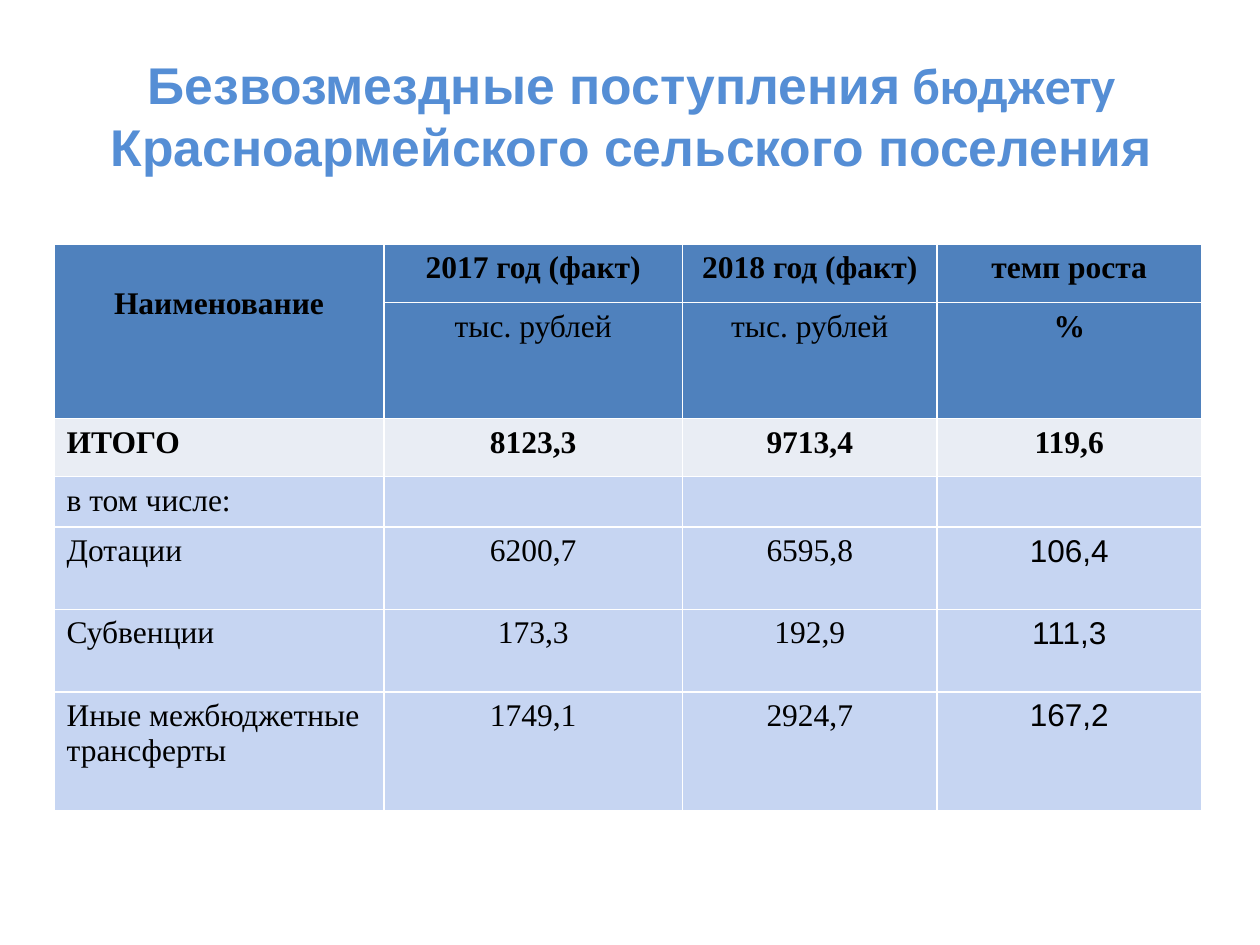
from dataclasses import dataclass

import pptx
import pptx.dml.color
import pptx.enum.text
import pptx.oxml
import pptx.oxml.ns
import pptx.util
from pptx.dml.color import RGBColor
from pptx.util import Cm

TITLE_BLUE = RGBColor(0x55, 0x8E, 0xD5)
HEADER_BLUE = RGBColor(0x4F, 0x81, 0xBD)
TOTAL_GREY = RGBColor(0xE9, 0xED, 0xF4)
BODY_BLUE = RGBColor(0xC6, 0xD5, 0xF2)
BLACK = RGBColor(0, 0, 0)
WHITE = RGBColor(0xFF, 0xFF, 0xFF)

SERIF, SANS = "Times New Roman", "Arial"
LEFT = pptx.enum.text.PP_ALIGN.LEFT
CENTER = pptx.enum.text.PP_ALIGN.CENTER
COL_WIDTHS = (6.65, 6.02, 5.13, 5.33)


@dataclass(frozen=True)
class Row:
    height: float
    fill: RGBColor
    texts: tuple[str, ...]
    bold: tuple[bool, ...] = (False,) * 4
    label_align: int = LEFT
    rate_font: str = SERIF


ROWS = (
    Row(1.17, HEADER_BLUE,
        ("Наименование", "2017 год (факт)", "2018 год (факт)", "темп роста"),
        bold=(True,) * 4, label_align=CENTER),
    Row(2.34, HEADER_BLUE, ("", "тыс. рублей", "тыс. рублей", "%"),
        bold=(False, False, False, True)),
    Row(1.17, TOTAL_GREY, ("ИТОГО", "8123,3", "9713,4", "119,6"),
        bold=(True,) * 4),
    Row(0.97, BODY_BLUE, ("в том числе:", "", "", "")),
    Row(1.66, BODY_BLUE, ("Дотации", "6200,7", "6595,8", "106,4"),
        rate_font=SANS),
    Row(1.66, BODY_BLUE, ("Субвенции", "173,3", "192,9", "111,3"),
        rate_font=SANS),
    Row(2.39, BODY_BLUE,
        ("Иные межбюджетные трансферты", "1749,1", "2924,7", "167,2"),
        rate_font=SANS),
)


def add_text(p, text: str, *, font: str = SERIF, size: float = 18,
             color: RGBColor = BLACK, bold: bool = False,
             align: int = CENTER) -> None:
    p.alignment = align
    r = p.add_run()
    r.text = text
    r.font.name = font
    r.font.size = pptx.util.Pt(size)
    r.font.bold = bold
    r.font.color.rgb = color


def set_borders(cell, color: RGBColor = WHITE, width: float = 1) -> None:
    tc_pr = cell._tc.get_or_add_tcPr()
    for i, side in enumerate(("lnL", "lnR", "lnT", "lnB")):
        tc_pr.insert(i, pptx.oxml.parse_xml(
            f'<a:{side} {pptx.oxml.ns.nsdecls("a")} w="{pptx.util.Pt(width)}">'
            f'<a:solidFill><a:srgbClr val="{color}"/></a:solidFill></a:{side}>'))


def add_title(s) -> None:
    sp = s.shapes.add_textbox(Cm(1.3), Cm(0.91), Cm(22.86), Cm(2.8))
    tf = sp.text_frame
    tf.word_wrap = True
    tf.vertical_anchor = pptx.enum.text.MSO_ANCHOR.MIDDLE
    for text, font in (("Безвозмездные поступления", SANS),
                       (" бюджету ", "Calibri"),
                       ("Красноармейского сельского поселения", SANS)):
        add_text(tf.paragraphs[0], text, font=font, size=29.5,
                 color=TITLE_BLUE, bold=True)


def add_income_table(s) -> None:
    table = s.shapes.add_table(
        len(ROWS), len(COL_WIDTHS), Cm(1.09), Cm(4.93),
        Cm(sum(COL_WIDTHS)), Cm(sum(row.height for row in ROWS))).table
    table.first_row = table.horz_banding = False
    for column, width in zip(table.columns, COL_WIDTHS):
        column.width = Cm(width)
    # The name heading spans both header rows
    name = table.cell(0, 0)
    name.merge(table.cell(1, 0))
    name.margin_top = Cm(0.84)

    for i, row in enumerate(ROWS):
        table.rows[i].height = Cm(row.height)
        for j, text in enumerate(row.texts):
            cell = table.cell(i, j)
            cell.fill.solid()
            cell.fill.fore_color.rgb = row.fill
            set_borders(cell)
            add_text(cell.text_frame.paragraphs[0], text, bold=row.bold[j],
                     font=row.rate_font if j == 3 else SERIF,
                     align=row.label_align if j == 0 else CENTER)


def main() -> None:
    prs = pptx.Presentation()
    prs.slide_width, prs.slide_height = Cm(25.4), Cm(19.05)
    s = prs.slides.add_slide(prs.slide_layouts[6])
    add_title(s)
    add_income_table(s)
    prs.save("out.pptx")


if __name__ == "__main__":
    main()
